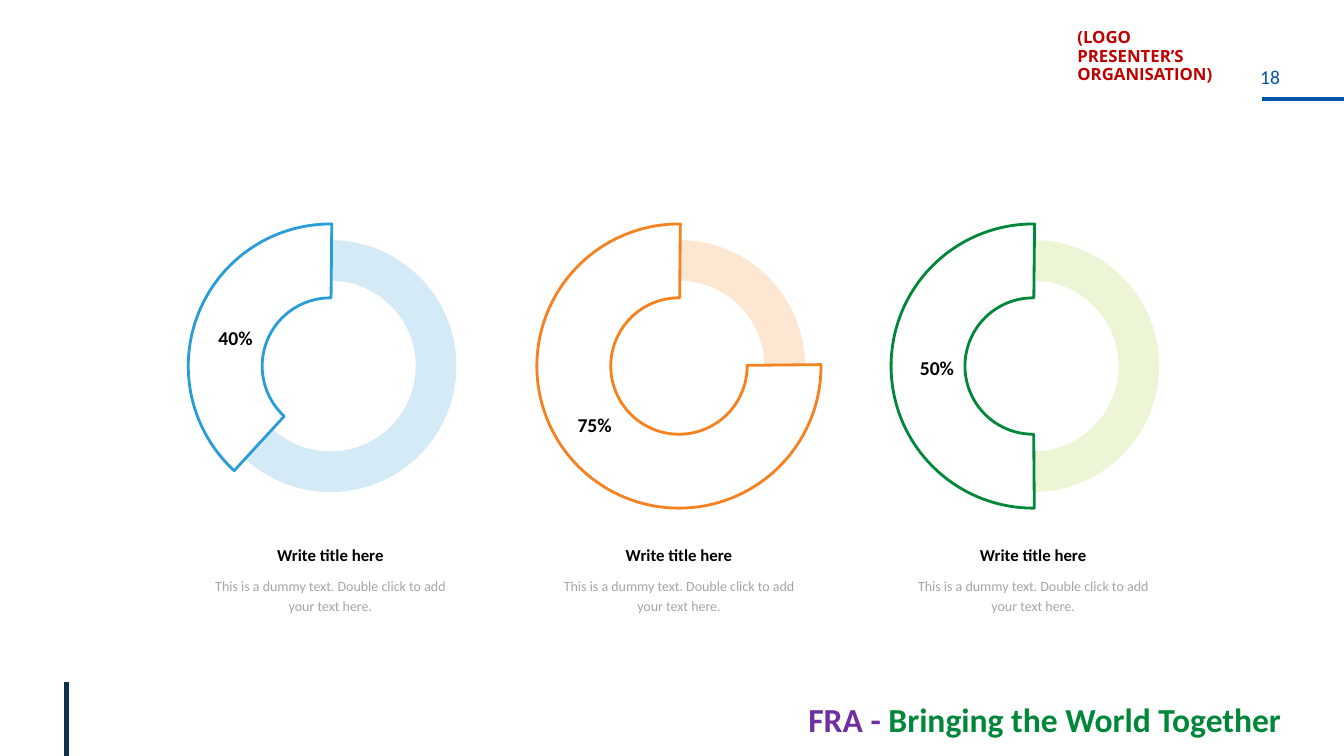
from lxml import etree
from pptx import Presentation
from pptx.dml.color import RGBColor
from pptx.enum.shapes import MSO_CONNECTOR, MSO_SHAPE
from pptx.enum.text import PP_ALIGN
from pptx.oxml.ns import qn
from pptx.util import Pt

STRAIGHT = MSO_CONNECTOR.STRAIGHT
DONUT, BLOCK_ARC = MSO_SHAPE.DONUT, MSO_SHAPE.BLOCK_ARC
LEFT, CENTER, RIGHT = PP_ALIGN.LEFT, PP_ALIGN.CENTER, PP_ALIGN.RIGHT

WIDTH, HEIGHT = 960, 540
BLANK_LAYOUT = 6
COLORS = {
    "blue": "289DD8", "pale blue": "D4EBF7",
    "orange": "F58220", "pale orange": "FDE6D2",
    "green": "008739", "pale green": "EDF5D7",
    "purple": "7030A0", "red": "C00000", "navy": "0A324B", "rule": "0055A5",
    "black": "000000", "gray": "808080", "white": "FFFFFF",
}

RING_SIZE = 180
RING_TOP = 171.5
ARC_MARGIN = 11.5
ARC_END = 270.57
CAPTION_OFFSET = 211.5
# left, color, start angle of the arc, label, offset of the label in the ring
RINGS = [
    (146, "blue", 132.6, "40%", (8.5, 57.5)),
    (395, "orange", 359.43, "75%", (16, 120)),
    (648, "green", 89.54, "50%", (7.5, 79)),
]


def rgb(color):
    return RGBColor.from_string(COLORS[color])


def add_text_box(slide, box, margins=(7.2, 3.6), wrap=True):
    text_box = slide.shapes.add_textbox(*map(Pt, box))
    frame = text_box.text_frame
    frame.word_wrap = wrap
    frame.margin_left = frame.margin_right = Pt(margins[0])
    frame.margin_top = frame.margin_bottom = Pt(margins[1])
    return frame


def add_run(paragraph, text, size, color, bold=False, font="Calibri"):
    run = paragraph.add_run()
    run.text = text
    run.font.name = font
    run.font.size = Pt(size)
    run.font.bold = bold
    run.font.color.rgb = rgb(color)
    return run


def set_opacity(run, percent):
    color = run.font._element.find(".//" + qn("a:srgbClr"))
    etree.SubElement(color, qn("a:alpha")).set("val", str(percent * 1000))


def add_line(slide, start, end, color):
    line = slide.shapes.add_connector(STRAIGHT, *map(Pt, start + end))
    line.line.color.rgb = rgb(color)
    line.line.width = Pt(3)
    etree.SubElement(line._element.spPr, qn("a:effectLst"))


def add_ring_shape(slide, kind, box, adjustments, fill, outline=None):
    shape = slide.shapes.add_shape(kind, *map(Pt, box))
    shape.shadow.inherit = False
    for index, value in enumerate(adjustments):
        shape.adjustments[index] = value
    shape.fill.solid()
    shape.fill.fore_color.rgb = rgb(fill)
    if outline:
        shape.line.color.rgb = rgb(outline)
        shape.line.width = Pt(2)
    else:
        shape.line.fill.background()


def add_caption(slide, box):
    frame = add_text_box(slide, box, (0, 3.6))
    title = frame.paragraphs[0]
    body = frame.add_paragraph()
    body.space_before = Pt(6)
    for paragraph in (title, body):
        paragraph.alignment = CENTER
        paragraph.line_spacing = 1.2
    add_run(title, "Write title here", 12, "black", True)
    text = "This is a dummy text. Double click to add your text here."
    set_opacity(add_run(body, text, 10, "gray"), 70)


def add_ring(slide, box, color, start_angle, label, label_offset):
    left, top, size, _ = box
    add_ring_shape(slide, DONUT, box, [0.161], "pale " + color)
    arc_size = size + 2 * ARC_MARGIN
    arc_box = (left - ARC_MARGIN, top - ARC_MARGIN, arc_size, arc_size)
    # Angles are stored in 60000ths of a degree, adjustments in 100000ths.
    angles = [angle * 0.6 for angle in (start_angle, ARC_END)]
    add_ring_shape(slide, BLOCK_ARC, arc_box, angles + [0.26], "white", color)

    label_box = (left + label_offset[0], top + label_offset[1], 26, 24.5)
    frame = add_text_box(slide, label_box, (0, 3.6), wrap=False)
    frame.paragraphs[0].alignment = RIGHT
    add_run(frame.paragraphs[0], label, 14, "black", True)
    add_caption(slide, (left, top + CAPTION_OFFSET, size, 60))


def add_header(slide, box):
    left, top, width, _ = box
    right = left + width
    frame = add_text_box(slide, (right - 197.5, top + 17.5, 114.5, 72.5))
    paragraph = frame.paragraphs[0]
    paragraph.alignment = LEFT
    paragraph.line_spacing = 0.9
    add_run(paragraph, "(LOGO PRESENTER’S ORGANISATION)", 12, "red", True, "Open Sans")

    number = add_text_box(slide, (right - 96, top + 46, 86.5, 24), (0, 0), wrap=False)
    number.paragraphs[0].alignment = CENTER
    add_run(number.paragraphs[0], "18", 14, "rule")
    add_line(slide, (right - 58.5, top + 70.5), (right, top + 70.5), "rule")


def add_footer(slide, box):
    left, top, width, height = box
    add_line(slide, (left + 47.5, top), (left + 47.5, top + height), "navy")
    slogan_box = (left + width - 418.5, top + 8, 409.5, 36)
    frame = add_text_box(slide, slogan_box, wrap=False)
    paragraph = frame.paragraphs[0]
    paragraph.alignment = CENTER
    add_run(paragraph, "FRA - ", 24, "purple", True)
    add_run(paragraph, "Bringing the World Together", 24, "green", True)


def main():
    presentation = Presentation()
    presentation.slide_width, presentation.slide_height = Pt(WIDTH), Pt(HEIGHT)
    slide = presentation.slides.add_slide(presentation.slide_layouts[BLANK_LAYOUT])
    add_header(slide, (0, 0, WIDTH, 90))
    for left, *ring in RINGS:
        add_ring(slide, (left, RING_TOP, RING_SIZE, RING_SIZE), *ring)
    add_footer(slide, (0, 487.5, WIDTH, 52.5))
    presentation.save("out.pptx")


if __name__ == "__main__":
    main()
